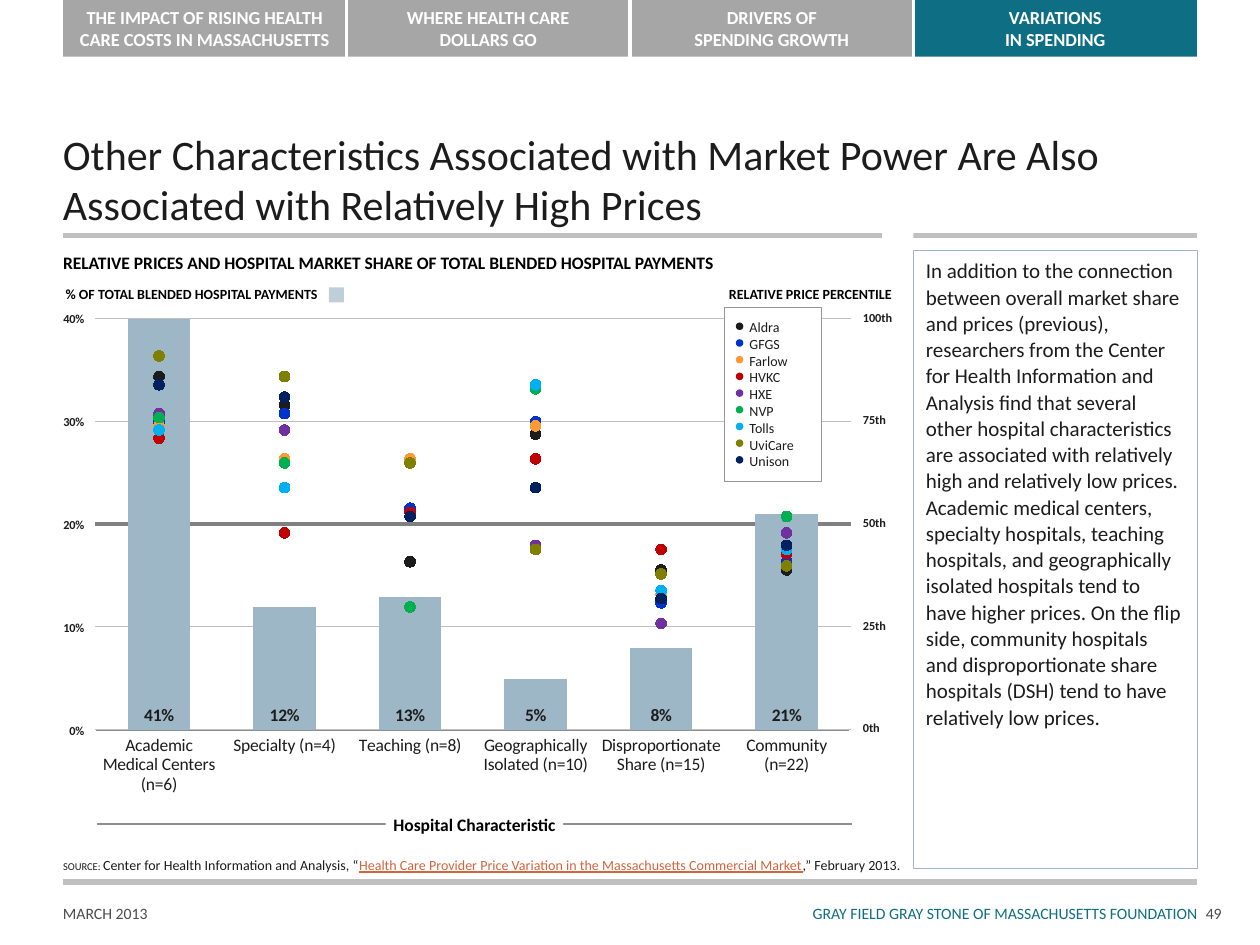
from pptx import Presentation
from pptx.chart.data import CategoryChartData as ChartData
from pptx.dml.color import RGBColor as RGB
from pptx.enum.chart import XL_CHART_TYPE as Kind, XL_LABEL_POSITION as Spot
from pptx.enum.chart import XL_MARKER_STYLE as Mark, XL_TICK_MARK as Tick
from pptx.enum.shapes import MSO_CONNECTOR as Link, MSO_SHAPE as Form
from pptx.enum.text import MSO_ANCHOR as Anchor, MSO_AUTO_SIZE as Auto, PP_ALIGN as Align
from pptx.oxml import parse_xml
from pptx.oxml.ns import nsdecls, qn
from pptx.util import Inches, Pt

HUES = {"ink": "1C1C1C", "black": "000000", "white": "FFFFFF", "teal": "0E6E83",
        "tab": "A6A6A6", "rule": "C0C0C0", "grid": "BFBFBF", "mid": "808080",
        "axis": "8E8E8E", "edge": "969696", "bar": "9EB7C7", "key": "BECFDA",
        "foot": "4B4B4B", "link": "D3643B"}
FONT = "Calibri"
SNUG = (0, 0.05, 0, 0.05)
EVEN = (0.05,) * 4
WIDE = (0.1, 0.05, 0.1, 0.05)
TABS = ["THE IMPACT OF RISING HEALTH CARE COSTS IN MASSACHUSETTS",
        "WHERE HEALTH CARE\vDOLLARS GO", "DRIVERS OF\vSPENDING GROWTH",
        "VARIATIONS\vIN SPENDING"]
CATS = ["Academic Medical Centers (n=6)", "Specialty (n=4)", "Teaching (n=8)",
        "Geographically Isolated (n=10)", "Disproportionate Share (n=15)",
        "Community (n=22)"]
SHARE = [0.41, 0.12, 0.13, 0.05, 0.08, 0.21]
PLANS = [("Aldra", "1C1C1C", [0.86, 0.79, 0.41, 0.72, 0.39, 0.39]),
         ("GFGS", "0033CC", [0.75, 0.77, 0.54, 0.75, 0.31, 0.41]),
         ("Farlow", "FF9933", [0.74, 0.66, 0.66, 0.74, 0.33, 0.4]),
         ("HVKC", "C00000", [0.71, 0.48, 0.53, 0.66, 0.44, 0.43]),
         ("HXE", "7030A0", [0.77, 0.73, 0.52, 0.45, 0.26, 0.48]),
         ("NVP", "00B050", [0.76, 0.65, 0.3, 0.83, 0.32, 0.52]),
         ("Tolls", "00B0F0", [0.73, 0.59, 0.52, 0.84, 0.34, 0.44]),
         ("UviCare", "808000", [0.91, 0.86, 0.65, 0.44, 0.38, 0.4]),
         ("Unison", "002060", [0.84, 0.81, 0.52, 0.59, 0.32, 0.45])]
BODY = ("In addition to the connection between overall market share and prices "
        "(previous), researchers from the Center for Health Information and Analysis "
        "find that several other hospital characteristics are associated with "
        "relatively high and relatively low prices. Academic medical centers, "
        "specialty hospitals, teaching hospitals, and geographically isolated "
        "hospitals tend to have higher prices. On the flip side, community hospitals "
        "and disproportionate share hospitals (DSH) tend to have relatively low prices.")
SOURCE = [("SOURCE: ", 6, "ink"),
          ("Center for Health Information and Analysis, “", 8, "ink"),
          ("Health Care Provider Price Variation in the Massachusetts Commercial Market",
           8, "link"), (",” February 2013.", 8, "ink")]
LINES = """<c:lineChart %s><c:grouping val="standard"/><c:varyColors val="0"/>
<c:marker val="1"/><c:axId val="501"/><c:axId val="502"/></c:lineChart>"""
BASE = """<c:catAx %s><c:axId val="501"/><c:scaling><c:orientation val="minMax"/></c:scaling>
<c:delete val="1"/><c:axPos val="b"/><c:crossAx val="502"/><c:crosses val="autoZero"/></c:catAx>"""
RIGHT = """<c:valAx %s><c:axId val="502"/><c:scaling><c:orientation val="minMax"/><c:max val="1"/>
<c:min val="0"/></c:scaling><c:delete val="0"/><c:axPos val="r"/>
<c:numFmt formatCode="0%%" sourceLinked="0"/><c:majorTickMark val="cross"/>
<c:minorTickMark val="none"/><c:tickLblPos val="none"/>
<c:spPr><a:ln><a:noFill/></a:ln></c:spPr><c:crossAx val="501"/><c:crosses val="max"/>
<c:crossBetween val="between"/><c:majorUnit val="0.25"/></c:valAx>"""
PLOT = """<c:layout %s><c:manualLayout><c:layoutTarget val="inner"/><c:xMode val="edge"/>
<c:yMode val="edge"/><c:x val="0.092"/><c:y val="0.052"/><c:w val="0.854"/>
<c:h val="0.704"/></c:manualLayout></c:layout>"""
CLEAR = "<c:spPr %s><a:noFill/><a:ln><a:noFill/></a:ln></c:spPr>"


def hue(name):
    """Return a named or hex colour."""
    return RGB.from_string(HUES.get(name, name))


def make(xml):
    """Parse a chart fragment."""
    return parse_xml(xml % nsdecls("c", "a"))


def drop(parent, tag):
    """Remove the children that have a tag."""
    for child in parent.findall(qn(tag)):
        parent.remove(child)


def style(font, size, tone="ink", bold=False):
    """Set the look of a font."""
    font.name, font.size, font.bold = FONT, Pt(size), bold
    font.color.rgb = hue(tone)


def frame(shape, ins, anchor=Anchor.TOP, wrap=True, grow=False):
    """Set the insets and fit of a text frame."""
    text = shape.text_frame
    text.margin_left, text.margin_top, text.margin_right, text.margin_bottom = map(Inches, ins)
    text.vertical_anchor, text.word_wrap = anchor, wrap
    text.auto_size = Auto.SHAPE_TO_FIT_TEXT if grow else Auto.NONE
    return text


def write(shape, words, size, tone="ink", bold=False, align=Align.LEFT, ins=SNUG, **fit):
    """Fill a shape with text in one style."""
    text = frame(shape, ins, **fit)
    text.text = words
    for para in text.paragraphs:
        para.alignment = align
        for run in para.runs:
            style(run.font, size, tone, bold)
    return text


def label(shapes, box, words, size, *args, **opts):
    """Add a text box."""
    return write(shapes.add_textbox(*map(Inches, box)), words, size, *args, **opts)


def block(shapes, box, fill=None, edge=None, width=0.5, form=Form.RECTANGLE):
    """Add a flat shape."""
    shape = shapes.add_shape(form, *map(Inches, box))
    shape.shadow.inherit = False
    for part, tone in ((shape.fill, fill), (shape.line.fill, edge)):
        if tone:
            part.solid()
            part.fore_color.rgb = hue(tone)
        else:
            part.background()
    if edge:
        shape.line.width = Pt(width)
    return shape


def rule(shapes, ends, tone, width):
    """Add a straight line."""
    line = shapes.add_connector(Link.STRAIGHT, *map(Inches, ends))
    line.line.color.rgb, line.line.width = hue(tone), Pt(width)
    props = line.element.find(qn("p:spPr"))
    props.append(parse_xml("<a:effectLst %s/>" % nsdecls("a")))


def header(shapes, x, y, w, h):
    """Draw the row of tabs, the last one active."""
    step = w / len(TABS)
    for i, words in enumerate(TABS):
        tone = "teal" if words == TABS[-1] else "tab"
        tab = block(shapes, (x + i * step, y, step, h), tone)
        write(tab, words, 10.5, "white", True, Align.CENTER, EVEN, anchor=Anchor.BOTTOM)
    for i in range(1, len(TABS)):
        rule(shapes, (x + i * step, y, x + i * step, y + h), "white", 2)


def footer(shapes, x, y, w, h):
    """Draw the date, the owner and the page number."""
    none = (0,) * 4
    label(shapes, (x, y, 1, h), "MARCH 2013", 9, "foot", ins=none)
    label(shapes, (x + w - 4.31, y, 4.31, h), "GRAY FIELD GRAY STONE OF MASSACHUSETTS FOUNDATION",
          9, "teal", align=Align.RIGHT, ins=none)
    label(shapes, (x + w + 0.07, y, 0.43, h), "49", 9, "foot", ins=none)


def grid(shapes, x, y, w, h):
    """Draw the grid lines and the percentile labels."""
    lines = shapes.add_group_shape().shapes
    for i, words in enumerate(["100th", "75th", "50th", "25th", "0th"]):
        top = y + i * h / 4
        tone, width = ("mid", 2.25) if i == 2 else ("grid", 0.5)
        rule(lines, (x + w, top, x, top), tone, width)
        label(shapes, (x + w, top - 0.12, 0.19 + 0.05 * len(words), 0.22), words, 7, bold=True,
              ins=WIDE, wrap=False, grow=True)


def graph(shapes, x, y, w, h):
    """Draw share as columns and prices as markers on a second axis."""
    data = ChartData(number_format="0%")
    data.categories = CATS
    for i, vals in enumerate([SHARE] + [plan[2] for plan in PLANS], 1):
        data.add_series(f"Series {i}", vals)
    chart = shapes.add_chart(Kind.COLUMN_CLUSTERED, *map(Inches, (x, y, w, h)), data).chart
    chart.has_title = chart.has_legend = False
    style(chart.font, 18)
    cat, val = chart.category_axis, chart.value_axis
    style(cat.tick_labels.font, 10)
    style(val.tick_labels.font, 7, bold=True)
    cat.major_tick_mark = Tick.NONE
    cat.format.line.color.rgb, cat.format.line.width = hue("axis"), Pt(0.75)
    val.has_major_gridlines, val.major_tick_mark = False, Tick.CROSS
    val.minimum_scale, val.maximum_scale, val.major_unit = 0, 0.4, 0.1
    val.tick_labels.number_format, val.tick_labels.number_format_is_linked = "0%", False
    val.format.line.fill.background()

    root = chart.element.find(qn("c:chart"))
    area = root.find(qn("c:plotArea"))
    bars, lines = area.find(qn("c:barChart")), make(LINES)
    for ser in bars.findall(qn("c:ser"))[1:]:
        drop(ser, "c:invertIfNegative")
        lines.find(qn("c:marker")).addprevious(ser)
    bars.addnext(lines)
    for axis in (RIGHT, BASE):
        area.find(qn("c:valAx")).addnext(make(axis))
    drop(area, "c:layout")
    area.insert(0, make(PLOT))
    area.append(make(CLEAR))
    root.addnext(make(CLEAR))

    cols, dots = chart.plots
    cols.gap_width, cols.vary_by_categories = 100, False
    first = cols.series[0]
    first.format.fill.solid()
    first.format.fill.fore_color.rgb = hue("bar")
    tags = first.data_labels
    tags.show_value, tags.position = True, Spot.INSIDE_BASE
    tags.number_format, tags.number_format_is_linked = "0%", False
    style(tags.font, 10, bold=True)
    for ser, (_, tone, _) in zip(dots.series, PLANS):
        ser.smooth = False
        ser.format.line.fill.background()
        mark = ser.marker
        mark.style, mark.size = Mark.CIRCLE, 6
        mark.format.fill.solid()
        mark.format.fill.fore_color.rgb = mark.format.line.color.rgb = hue(tone)


def heads(shapes, x, y, w):
    """Draw the chart heading and the names of both scales."""
    label(shapes, (x, y, 6.49, 0.27),
          "RELATIVE PRICES AND HOSPITAL MARKET SHARE OF TOTAL BLENDED HOSPITAL PAYMENTS",
          10, "black", True, wrap=False)
    key = shapes.add_group_shape().shapes
    label(key, (x + 0.02, y + 0.27, 1.21, 0.27), "% OF TOTAL BLENDED HOSPITAL PAYMENTS",
          8, "black", True, wrap=False)
    block(key, (x + 2.11, y + 0.33, 0.12, 0.12), "key")
    label(shapes, (x + w - 1.14, y + 0.27, 1.14, 0.27), "RELATIVE PRICE PERCENTILE",
          8, "black", True, Align.RIGHT, wrap=False)


def legend(shapes, x, y, w, h):
    """Draw the list of health plans with their dots."""
    group = shapes.add_group_shape().shapes
    block(group, (x, y, w, h), "white", "edge")
    label(group, (x + 0.1, y + 0.04, 0.57, 1.31), "\n".join(plan[0] for plan in PLANS), 8,
          ins=WIDE, wrap=False, grow=True)
    for i, (_, tone, _) in enumerate(PLANS):
        block(group, (x + 0.09, y + 0.12 + i * 0.1325, 0.06, 0.06), tone, form=Form.OVAL)


def base(shapes, x, y, w):
    """Draw the axis name over its line."""
    rule(shapes, (x, y, x + w, y), "axis", 0.75)
    name = block(shapes, (x + 2.29, y - 0.13, 1.41, 0.27), "white")
    write(name, "Hospital Characteristic", 10, "black", True, Align.CENTER, EVEN,
          wrap=False, grow=True)


def source(shapes, *box):
    """Write the source line."""
    note = shapes.add_textbox(*map(Inches, box))
    para = frame(note, SNUG, Anchor.BOTTOM, grow=True).paragraphs[0]
    for words, size, tone in SOURCE:
        run = para.add_run()
        run.text = words
        style(run.font, size, tone)
        run.font.underline = tone == "link"


def main():
    """Build and save the slide."""
    deck = Presentation()
    deck.slide_width, deck.slide_height = Inches(10), Inches(7.5)
    shapes = deck.slides.add_slide(deck.slide_layouts[6]).shapes
    for y in (1.87, 7):
        rule(shapes, (0.5, y, 9.5, y), "rule", 3)
    header(shapes, 0.5, 0, 9, 0.45)
    footer(shapes, 0.5, 7.17, 9, 0.32)
    grid(shapes, 0.75, 2.53, 6, 3.26)
    graph(shapes, 0.12, 2.29, 7, 4.64)
    label(shapes, (0.5, 1, 9, 0.87), "Other Characteristics Associated with Market Power Are Also\v"
          "Associated with Relatively High Prices", 24, anchor=Anchor.BOTTOM)
    panel = block(shapes, (7.25, 1.99, 2.25, 4.9), edge="bar", width=0.25)
    write(panel, BODY, 12, ins=WIDE).paragraphs[0].line_spacing = Pt(15)
    heads(shapes, 0.5, 1.95, 6.58)
    block(shapes, (7, 1.79, 0.25, 0.13), "white")
    base(shapes, 0.77, 6.54, 5.99)
    legend(shapes, 5.75, 2.44, 0.77, 1.38)
    source(shapes, 0.5, 6.74, 6.75, 0.24)
    deck.save("out.pptx")


if __name__ == "__main__":
    main()
